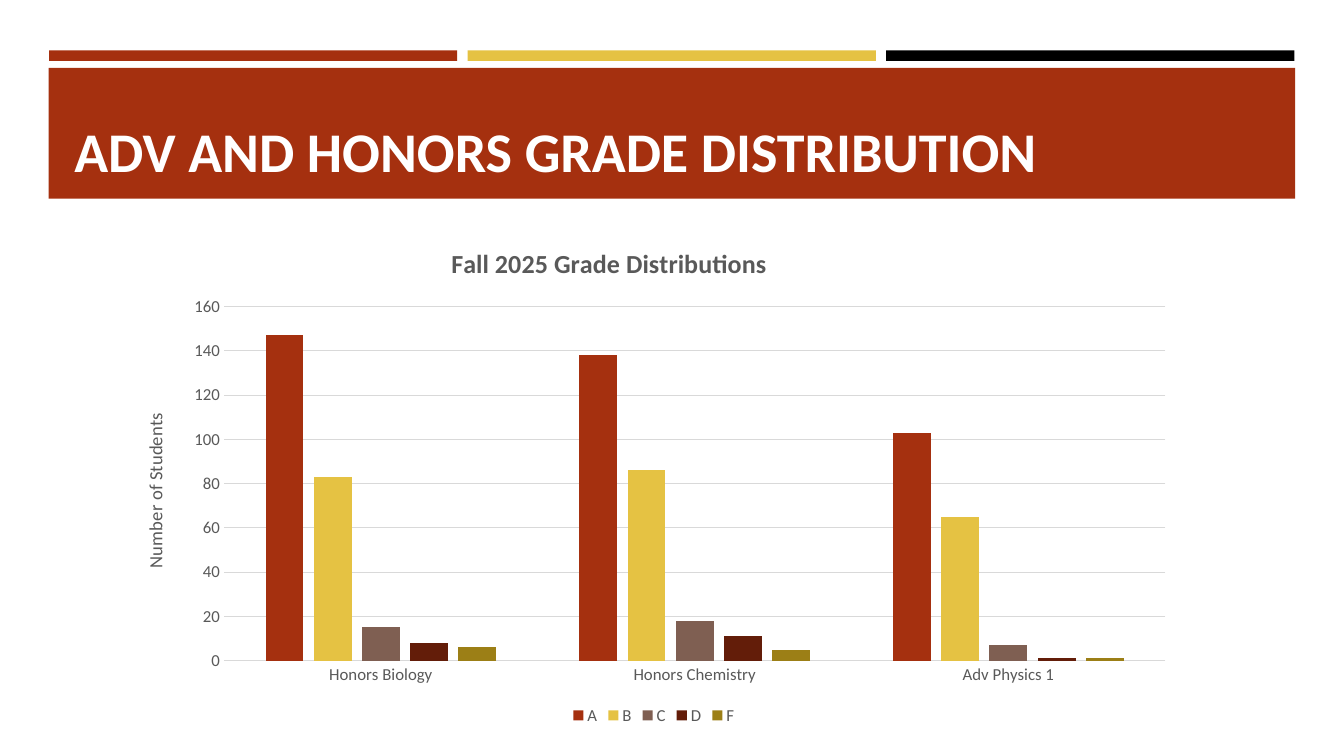
from lxml.etree import SubElement
from pptx import Presentation
from pptx.chart.data import CategoryChartData
from pptx.dml.color import RGBColor
from pptx.enum.chart import XL_CHART_TYPE, XL_LEGEND_POSITION, XL_TICK_MARK
from pptx.enum.shapes import MSO_SHAPE
from pptx.enum.text import MSO_ANCHOR
from pptx.oxml.ns import qn
from pptx.util import Pt

FONT = "Calibri"
RED, GOLD, BLACK, WHITE = "A5300F", "E5C243", "000000", "FFFFFF"
GRAY, GRID = "595959", "D9D9D9"
TITLE = "ADV AND HONORS GRADE DISTRIBUTION"
CHART_TITLE = "Fall 2025 Grade Distributions"
VALUE_TITLE = "Number of Students"
STRIPES = [RED, GOLD, BLACK]
COURSES = ["Honors Biology", "Honors Chemistry", "Adv Physics 1"]
GRADES = [
    ("A", RED, (147, 138, 103)),
    ("B", GOLD, (83, 86, 65)),
    ("C", "7F5F52", (15, 18, 7)),
    ("D", "631D09", (8, 11, 1)),
    ("F", "9C7F16", (6, 5, 1)),
]
STRIPE_LEFT, STRIPE_STEP = 35, 299
BANNER = (34.8, 48.5, 890.4, 93.5)
TITLE_BOX = (46, 54.5, 868, 80)
CHART_BOX = (87, 159, 760, 362)
CHART_TITLE_PLACE = {"x": 232, "y": 12.5}
PLOT_PLACE = {"x": 73, "y": 60, "w": 672.5, "h": 253}


def color(value):
    return RGBColor.from_string(value)


def format_font(font, size, fill=GRAY, bold=False):
    font.name = FONT
    font.size = Pt(size)
    font.bold = bold
    font.color.rgb = color(fill)


def write(frame, text, **style):
    run = frame.paragraphs[0].add_run()
    run.text = text
    format_font(run.font, **style)


def add_bar(slide, box, fill):
    shape = slide.shapes.add_shape(MSO_SHAPE.RECTANGLE, *map(Pt, box))
    shape.shadow.inherit = False
    shape.fill.solid()
    shape.fill.fore_color.rgb = color(fill)
    shape.line.fill.background()


def set_layout(parent, place, inner=False):
    layout = parent.find(qn("c:layout"))
    if layout is None:
        layout = SubElement(parent, qn("c:layout"))
        parent.remove(layout)
        position = 1 if parent.find(qn("c:tx")) is not None else 0
        parent.insert(position, layout)
    for child in list(layout):
        layout.remove(child)
    manual = SubElement(layout, qn("c:manualLayout"))
    if inner:
        SubElement(manual, qn("c:layoutTarget"), val="inner")
    for side in ("x", "y"):
        SubElement(manual, qn(f"c:{side}Mode"), val="edge")
    width, height = CHART_BOX[2:]
    for key, length in place.items():
        whole = width if key in "xw" else height
        SubElement(manual, qn(f"c:{key}"), val=str(length / whole))


def add_grade_chart(slide):
    data = CategoryChartData()
    data.categories = COURSES
    for name, _, values in GRADES:
        data.add_series(name, values)
    frame = slide.shapes.add_chart(
        XL_CHART_TYPE.COLUMN_CLUSTERED, *map(Pt, CHART_BOX), data)
    chart = frame.chart
    format_font(chart.font, 12)

    chart.has_title = True
    write(chart.chart_title.text_frame, CHART_TITLE, size=18.6, bold=True)
    chart.chart_title.include_in_layout = False
    chart.has_legend = True
    chart.legend.position = XL_LEGEND_POSITION.BOTTOM
    chart.legend.include_in_layout = False
    format_font(chart.legend.font, 12)

    plot = chart.plots[0]
    plot.gap_width = 219
    plot.overlap = -27
    plot.vary_by_categories = False
    for series, (_, fill, _) in zip(plot.series, GRADES):
        series.format.fill.solid()
        series.format.fill.fore_color.rgb = color(fill)
        series.invert_if_negative = False

    categories, values = chart.category_axis, chart.value_axis
    for axis in (categories, values):
        axis.major_tick_mark = axis.minor_tick_mark = XL_TICK_MARK.NONE
        format_font(axis.tick_labels.font, 12)
    values.minimum_scale = 0
    values.maximum_scale = 160
    values.major_unit = 20
    values.has_major_gridlines = True
    for line in (categories.format.line, values.major_gridlines.format.line):
        line.color.rgb = color(GRID)
        line.width = Pt(0.75)
    values.format.line.fill.background()
    values.has_title = True
    write(values.axis_title.text_frame, VALUE_TITLE, size=13.3)

    chart_root = chart.element.chart
    set_layout(chart_root.find(qn("c:title")), CHART_TITLE_PLACE)
    set_layout(chart_root.plotArea, PLOT_PLACE, inner=True)


def main():
    presentation = Presentation()
    presentation.slide_width = Pt(960)
    presentation.slide_height = Pt(540)
    slide = presentation.slides.add_slide(presentation.slide_layouts[6])
    for index, fill in enumerate(STRIPES):
        add_bar(slide, (STRIPE_LEFT + index * STRIPE_STEP, 36, 291.6, 7.5), fill)
    add_bar(slide, BANNER, RED)
    frame = slide.shapes.add_textbox(*map(Pt, TITLE_BOX)).text_frame
    frame.word_wrap = True
    frame.vertical_anchor = MSO_ANCHOR.BOTTOM
    write(frame, TITLE, size=40, fill=WHITE, bold=True)
    add_grade_chart(slide)
    presentation.save("out.pptx")


if __name__ == "__main__":
    main()
